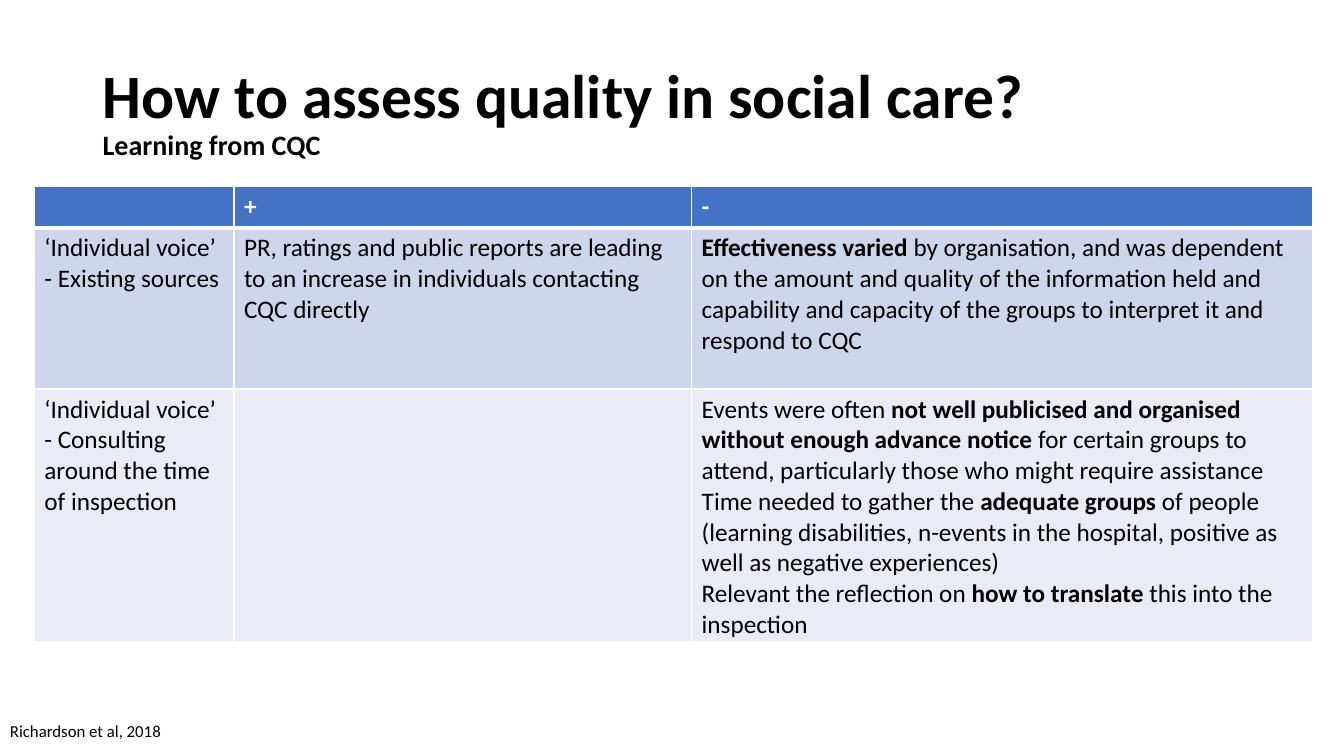
"""Build the slide on assessing quality in social care."""
from lxml.etree import SubElement
from pptx import Presentation
from pptx.dml.color import RGBColor
from pptx.enum.text import MSO_ANCHOR
from pptx.oxml.ns import qn
from pptx.util import Inches, Pt

TITLE = ["How to assess quality in social care?", "Learning from CQC"]
SIZES = [44, 20]
SOURCE = "Richardson et al, 2018"
BLACK, WHITE = "000000", "FFFFFF"
COLS = [1.98, 4.54, 6.16]
# Asterisks enclose bold words; each string is one paragraph.
ROWS = [
    (0.41, "4472C4", WHITE, [[], ["*+*"], ["*-*"]]),
    (1.6, "CFD5EA", BLACK, [
        ["‘Individual voice’ - Existing sources"],
        ["PR, ratings and public reports are leading to an increase in "
         "individuals contacting CQC directly"],
        ["*Effectiveness varied *by organisation, and was dependent on the "
         "amount and quality of the information held and capability and "
         "capacity of the groups to interpret it and respond to CQC"],
    ]),
    (2.5, "E9EBF5", BLACK, [
        ["‘Individual voice’ - Consulting around the time of inspection"],
        [],
        ["Events were often *not well publicised and organised without enough "
         "advance notice *for certain groups to attend, particularly those "
         "who might require assistance",
         "Time needed to gather the *adequate groups *of people (learning "
         "disabilities, n-events in the hospital, positive as well as "
         "negative experiences)",
         "Relevant the reflection on *how to translate *this into the "
         "inspection"],
    ]),
]


def rgb(code):
    return RGBColor.from_string(code)


def style(run, size, color=BLACK, bold=False):
    font = run.font
    font.name, font.size, font.bold = "Calibri", Pt(size), bold
    font.color.rgb = rgb(color)


def add_text(slide, box, text, sizes, bold=False, wrap=True):
    frame = slide.shapes.add_textbox(*map(Inches, box)).text_frame
    frame.word_wrap = wrap
    para = frame.paragraphs[0]
    para.text = text
    for run, size in zip(para.runs, sizes):
        style(run, size, bold=bold)
    return frame


def edge(cell, base):
    props = cell._tc.get_or_add_tcPr()
    for side, width in zip("LRTB", (1, 1, 1, base)):
        line = SubElement(props, qn(f"a:ln{side}"), w=str(Pt(width)))
        fill = SubElement(line, qn("a:solidFill"))
        SubElement(fill, qn("a:srgbClr"), val=WHITE)


def fill_cell(cell, paras, back, color, base):
    edge(cell, base)
    cell.fill.solid()
    cell.fill.fore_color.rgb = rgb(back)
    frame = cell.text_frame
    frame.text = "\n".join(paras)
    for para, text in zip(frame.paragraphs, paras):
        para.text = ""
        for i, part in enumerate(text.split("*")):
            if part:
                run = para.add_run()
                run.text = part
                style(run, 18, color, i % 2 == 1)


def add_grid(slide):
    high = sum(row[0] for row in ROWS)
    box = map(Inches, (0.34, 1.85, sum(COLS), high))
    grid = slide.shapes.add_table(len(ROWS), len(COLS), *box).table
    for col, width in zip(grid.columns, COLS):
        col.width = Inches(width)
    for r, (height, back, color, cells) in enumerate(ROWS):
        grid.rows[r].height = Inches(height)
        for c, paras in enumerate(cells):
            fill_cell(grid.cell(r, c), paras, back, color, 1 if r else 3)
    for c in range(len(COLS)):
        top = grid.cell(1, c)._tc.tcPr.find(qn("a:lnT"))
        top.set("w", str(Pt(3)))


def main():
    deck = Presentation()
    deck.slide_width, deck.slide_height = Inches(13.33), Inches(7.5)
    slide = deck.slides.add_slide(deck.slide_layouts[6])
    head = add_text(slide, (0.92, 0.4, 11.5, 1.45), "\v".join(TITLE),
                    SIZES, bold=True)
    head.vertical_anchor = MSO_ANCHOR.MIDDLE
    head.paragraphs[0].line_spacing = 0.9
    add_text(slide, (0, 7.1, 1.72, 0.3), SOURCE, [12], wrap=False)
    add_grid(slide)
    deck.save("out.pptx")


if __name__ == "__main__":
    main()
